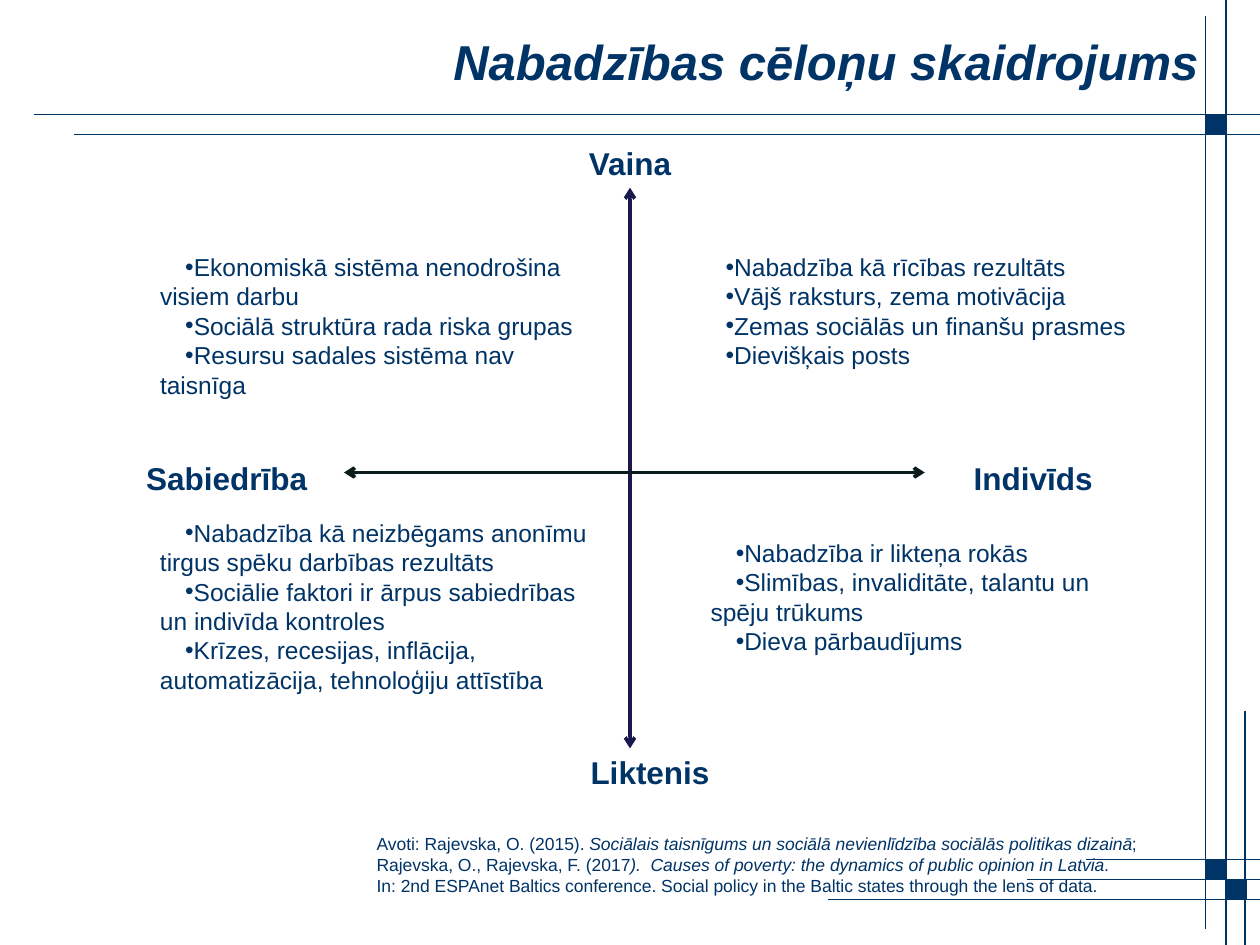
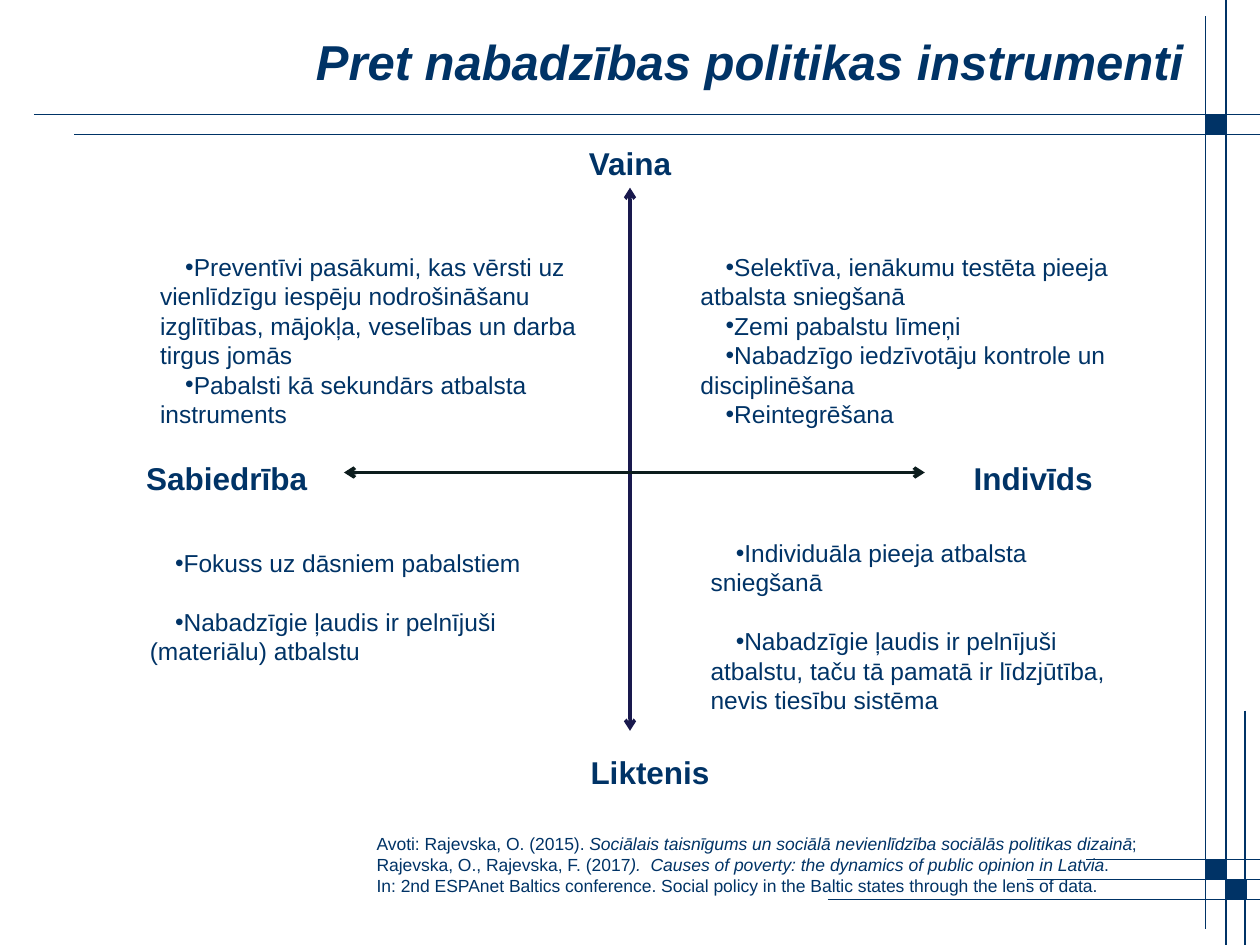
from lxml.etree import SubElement
from pptx import Presentation
from pptx.dml.color import RGBColor
from pptx.enum.shapes import MSO_CONNECTOR, MSO_SHAPE
from pptx.enum.text import MSO_ANCHOR, MSO_AUTO_SIZE, PP_ALIGN
from pptx.oxml.ns import qn
from pptx.util import Inches, Pt

NAVY = "003366"
AXIS_V = "19194D"
AXIS_H = "0C1C1D"
FONT = "Arial"
SQUARE = 0.16

FRAME_LINES = [
    (0.27, 0.91, 10, 0.91), (0.59, 1.07, 10, 1.07),
    (9.73, 0, 9.73, 7.5), (9.57, 0.13, 9.57, 7.37),
    (8.15, 6.98, 10, 6.98), (8.62, 6.82, 10, 6.82),
    (6.57, 7.14, 10, 7.14), (9.88, 5.64, 9.88, 7.5),
]
FRAME_SQUARES = [(9.57, 0.91), (9.57, 6.82), (9.73, 6.98)]

SOURCES = [
    [("Avoti: Rajevska, O. (2015). ", False),
     ("Sociālais taisnīgums un sociālā nevienlīdzība sociālās politikas dizainā", True),
     ("; Rajevska, O., Rajevska, F. (2017", False),
     (").  Causes of poverty: the dynamics of public opinion in Latvia", True),
     (".", False)],
    [("In: 2nd ESPAnet Baltics conference. Social policy in the Baltic states "
      "through the lens of data.", False)],
]

SLIDES = [
    {
        "title": "Nabadzības cēloņu skaidrojums",
        "title_width": 9.45,
        "axis_bottom": 5.94,
        "quadrants": [
            ((5.23, 1.95, 3.83, 1.04), 0, [
                "Nabadzība kā rīcības rezultāts",
                "Vājš raksturs, zema motivācija",
                "Zemas sociālās un finanšu prasmes",
                "Dievišķais posts"]),
            ((0.94, 1.95, 3.75, 1.04), 0, [
                "Ekonomiskā sistēma nenodrošina visiem darbu",
                "Sociālā struktūra rada riska grupas",
                "Resursu sadales sistēma nav taisnīga"]),
            ((0.94, 4.06, 3.83, 1.51), 0, [
                "Nabadzība kā neizbēgams anonīmu tirgus spēku darbības rezultāts",
                "Sociālie faktori ir ārpus sabiedrības un indivīda kontroles",
                "Krīzes, recesijas, inflācija, automatizācija, tehnoloģiju attīstība"]),
            ((5.31, 4.22, 3.44, 1.04), 0, [
                "Nabadzība ir likteņa rokās",
                "Slimības, invaliditāte, talantu un spēju trūkums",
                "Dieva pārbaudījums"]),
        ],
    },
    {
        "title": "Pret nabadzības politikas instrumenti",
        "title_width": 9.33,
        "axis_bottom": 5.8,
        "quadrants": [
            ((5.23, 1.95, 3.83, 1.51), 0, [
                "Selektīva, ienākumu testēta pieeja atbalsta sniegšanā",
                "Zemi pabalstu līmeņi",
                "Nabadzīgo iedzīvotāju kontrole un disciplinēšana",
                "Reintegrēšana"]),
            ((0.94, 1.95, 3.75, 1.51), 0, [
                "Preventīvi pasākumi, kas vērsti uz vienlīdzīgu iespēju nodrošināšanu "
                "izglītības, mājokļa, veselības un darba tirgus jomās",
                "Pabalsti kā sekundārs atbalsta instruments"]),
            ((0.86, 4.3, 3.83, 1.04), 16.8, [
                "Fokuss uz dāsniem pabalstiem",
                "Nabadzīgie ļaudis ir pelnījuši (materiālu) atbalstu"]),
            ((5.31, 4.22, 3.83, 1.28), 16.8, [
                "Individuāla pieeja atbalsta sniegšanā",
                "Nabadzīgie ļaudis ir pelnījuši atbalstu, taču tā pamatā ir "
                "līdzjūtība, nevis tiesību sistēma"]),
        ],
    },
]


def color(value):
    return RGBColor.from_string(value)


class Deck:
    def __init__(self):
        self.prs = Presentation()
        self.prs.slide_width = Inches(10)
        self.prs.slide_height = Inches(7.5)
        self.s = None

    def new_slide(self):
        self.s = self.prs.slides.add_slide(self.prs.slide_layouts[6])
        for ends in FRAME_LINES:
            self.line(*ends)
        for x, y in FRAME_SQUARES:
            self.square(x, y)

    def line(self, x1, y1, x2, y2, hue=NAVY, width=0.75, arrows=False):
        cx = self.s.shapes.add_connector(
            MSO_CONNECTOR.STRAIGHT, Inches(x1), Inches(y1), Inches(x2), Inches(y2))
        cx.line.color.rgb = color(hue)
        cx.line.width = Pt(width)
        if arrows:
            ln = cx.line._get_or_add_ln()
            for end in ("a:headEnd", "a:tailEnd"):
                SubElement(ln, qn(end), type="arrow")
        SubElement(cx._element.spPr, qn("a:effectLst"))
        return cx

    def square(self, x, y):
        sp = self.s.shapes.add_shape(
            MSO_SHAPE.RECTANGLE, Inches(x), Inches(y), Inches(SQUARE), Inches(SQUARE))
        sp.shadow.inherit = False
        sp.fill.solid()
        sp.fill.fore_color.rgb = color(NAVY)
        sp.line.color.rgb = color(NAVY)
        sp.line.width = Pt(0.75)

    def box(self, at, grow=True):
        sp = self.s.shapes.add_textbox(*map(Inches, at))
        tf = sp.text_frame
        tf.word_wrap = True
        tf.auto_size = MSO_AUTO_SIZE.SHAPE_TO_FIT_TEXT if grow else MSO_AUTO_SIZE.NONE
        return sp

    def paragraph(self, tf, index, align=PP_ALIGN.LEFT):
        p = tf.add_paragraph() if index else tf.paragraphs[0]
        p.alignment = align
        return p

    def run(self, p, text, size, bold=False, italic=False):
        r = p.add_run()
        r.text = text
        r.font.name = FONT
        r.font.size = Pt(size)
        r.font.bold = bold
        r.font.italic = italic
        r.font.color.rgb = color(NAVY)

    def title(self, text, width):
        tf = self.box((0.16, 0.13, width, 0.71), grow=False).text_frame
        tf.vertical_anchor = MSO_ANCHOR.MIDDLE
        self.run(self.paragraph(tf, 0, PP_ALIGN.RIGHT), text, 28, bold=True, italic=True)

    def label(self, text, x, y, width=1.56):
        sp = self.box((x, y, width, 0.4))
        self.run(self.paragraph(sp.text_frame, 0, PP_ALIGN.CENTER), text, 18, bold=True)
        return sp

    def axes(self, bottom):
        blame = self.label("Vaina", 4.45, 1.09, 1.1)
        self.label("Liktenis", 4.38, 5.93)
        self.label("Sabiedrība", 1.02, 3.59)
        self.label("Indivīds", 7.42, 3.59)
        vertical = self.line(5, 1.49, 5, bottom, AXIS_V, 2, arrows=True)
        vertical.begin_connect(blame, 2)
        self.line(2.73, 3.75, 7.34, 3.75, AXIS_H, 2, arrows=True)

    def bullets(self, at, gap, items):
        tf = self.box(at).text_frame
        tf.margin_left = Inches(0.33)
        for i, item in enumerate(items):
            p = self.paragraph(tf, i)
            pPr = p._p.get_or_add_pPr()
            pPr.set("marL", "0")
            pPr.set("indent", str(Inches(0.2)))
            if i and gap:
                p.space_before = Pt(gap)
            SubElement(pPr, qn("a:buFont"), typeface=FONT)
            SubElement(pPr, qn("a:buChar"), char="•")
            self.run(p, item, 14)

    def sources(self):
        tf = self.box((2.89, 6.56, 6.72, 0.61)).text_frame
        for i, parts in enumerate(SOURCES):
            p = self.paragraph(tf, i)
            for text, italic in parts:
                self.run(p, text, 10, italic=italic)


def main():
    deck = Deck()
    for content in SLIDES:
        deck.new_slide()
        deck.title(content["title"], content["title_width"])
        deck.axes(content["axis_bottom"])
        for at, gap, items in content["quadrants"]:
            deck.bullets(at, gap, items)
        deck.sources()
    deck.prs.save("out.pptx")


if __name__ == "__main__":
    main()
